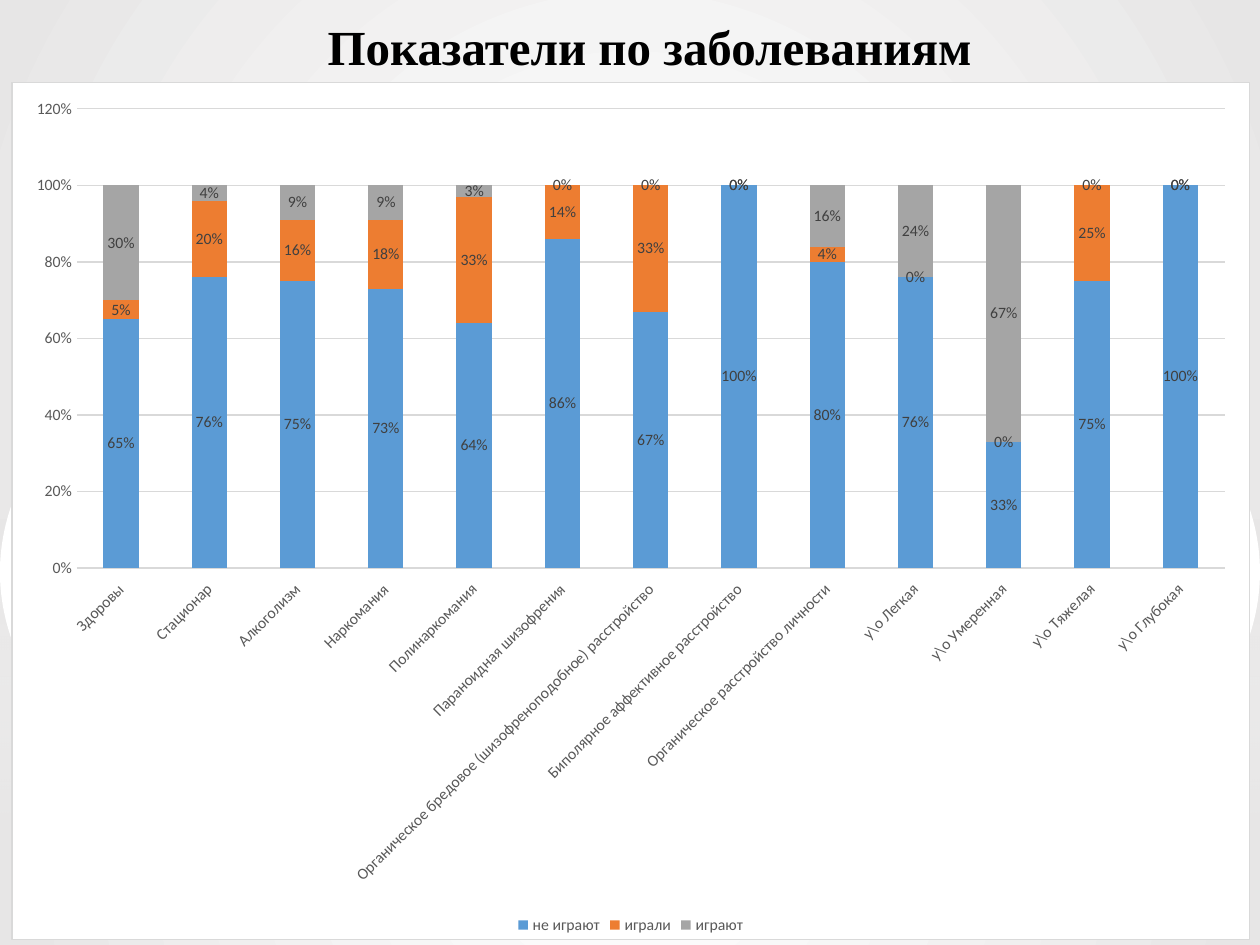
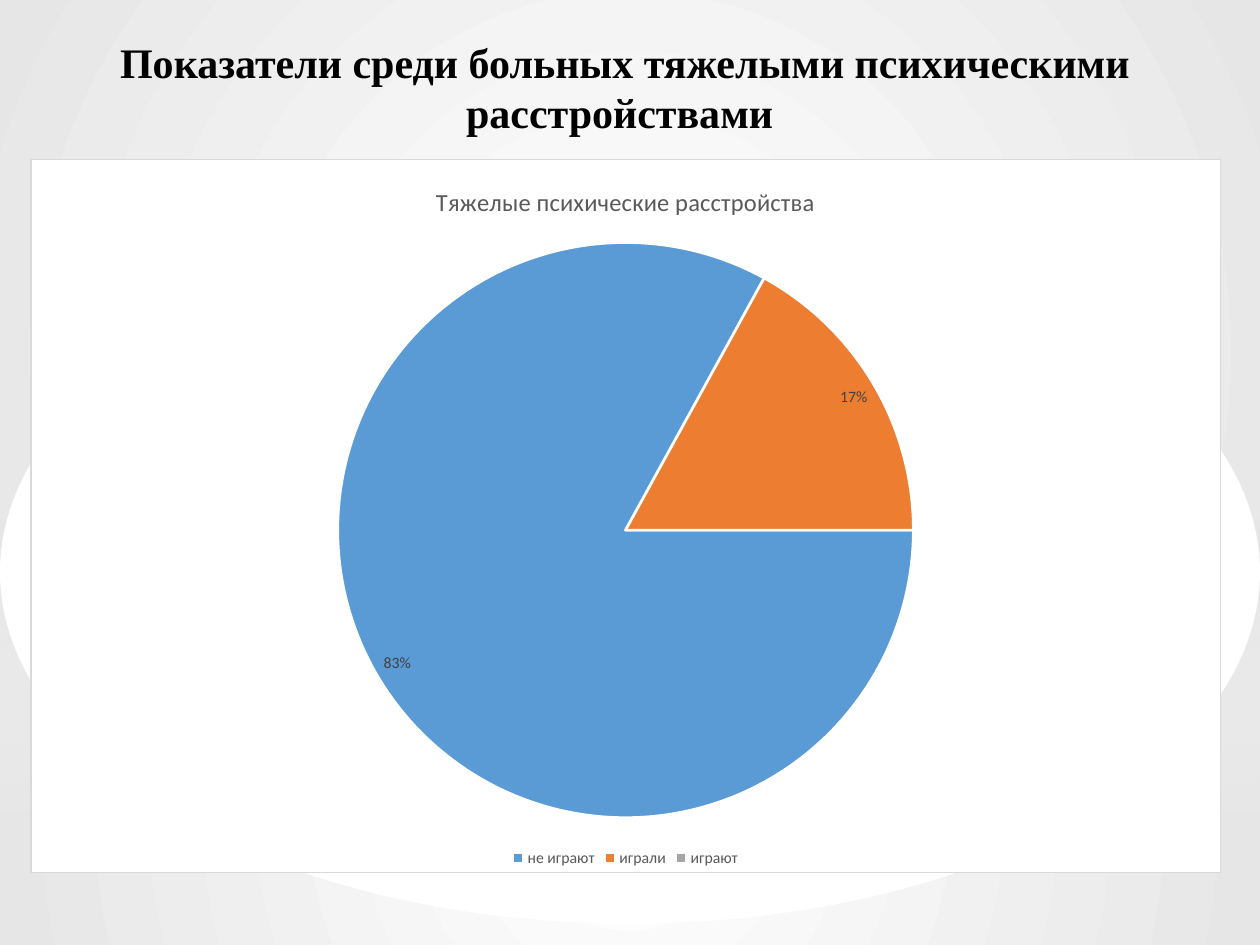
from dataclasses import dataclass
from typing import Optional

from lxml.etree import SubElement
from pptx import Presentation
from pptx.chart.chart import Chart
from pptx.chart.data import CategoryChartData
from pptx.dml.color import RGBColor
from pptx.dml.line import LineFormat
from pptx.enum.chart import (XL_CHART_TYPE, XL_LABEL_POSITION, XL_LEGEND_POSITION,
                             XL_TICK_LABEL_POSITION, XL_TICK_MARK)
from pptx.enum.shapes import MSO_SHAPE
from pptx.enum.text import MSO_ANCHOR, MSO_AUTO_SIZE, PP_ALIGN
from pptx.oxml import parse_xml
from pptx.oxml.ns import nsdecls, qn
from pptx.slide import Slide, SlideLayout
from pptx.text.text import Font, TextFrame
from pptx.util import Inches, Pt

COLORS = {
    "title": "000000",
    "white": "FFFFFF",
    "mist": "E7E6E6",
    "back_light": "DDDCDC",
    "back_dark": "BAB6B6",
    "rule": "D9D9D9",
    "axis_text": "595959",
    "label_text": "404040",
    "never": "5B9BD5",
    "formerly": "ED7D31",
    "currently": "A5A5A5",
}
TITLE_FONT = "Times New Roman"
CHART_FONT = "Calibri"
ANSWERS = ["не играют", "играли", "играют"]
ANSWER_COLORS = ["never", "formerly", "currently"]

SHARES_BY_ILLNESS = {
    "Здоровы": (0.65, 0.05, 0.3),
    "Стационар": (0.76, 0.2, 0.04),
    "Алкоголизм": (0.75, 0.16, 0.09),
    "Наркомания": (0.73, 0.18, 0.09),
    "Полинаркомания": (0.64, 0.33, 0.03),
    "Параноидная шизофрения": (0.86, 0.14, 0),
    "Органическое бредовое (шизофреноподобное) расстройство": (0.67, 0.33, 0),
    "Биполярное аффективное расстройство": (1, 0, 0),
    "Органическое расстройство личности": (0.8, 0.04, 0.16),
    "у\\о Легкая": (0.76, 0, 0.24),
    "у\\о Умеренная": (0.33, 0, 0.67),
    "у\\о Тяжелая": (0.75, 0.25, 0),
    "у\\о Глубокая": (1, 0, 0),
}
SEVERE_TITLE = "Тяжелые психические расстройства"
SEVERE_PERCENTAGES = (83, 17, 0)


@dataclass(frozen=True)
class Box:
    left: float
    top: float
    width: float
    height: float

    def emu(self) -> tuple:
        return tuple(Inches(n) for n in (self.left, self.top, self.width, self.height))


@dataclass(frozen=True)
class Gradient:
    """Two stops; radial towards focus (left, top, right, bottom), else downwards."""
    start: str
    end: str
    focus: Optional[tuple] = None
    alphas: tuple = (100, 100)


@dataclass(frozen=True)
class Backdrop:
    box: Box
    outline: MSO_SHAPE
    gradient: Optional[Gradient] = None


GLOW = Gradient("white", "mist", focus=(50, 50, 50, 50))
PAGE_GRADIENT = Gradient("back_light", "back_dark", focus=(50, 10, 50, 90))
BACKDROPS = [
    Backdrop(Box(0, 5.58, 10, 1.92), MSO_SHAPE.RECTANGLE, GLOW),
    Backdrop(Box(0, 0, 10, 5.58), MSO_SHAPE.RECTANGLE, GLOW),
    Backdrop(Box(0, 4.12, 10, 2.5), MSO_SHAPE.RECTANGLE,
             Gradient("mist", "white", alphas=(60, 0))),
    Backdrop(Box(0, 1.75, 10, 5.58), MSO_SHAPE.OVAL),
]


def rgb(name: str) -> RGBColor:
    return RGBColor.from_string(COLORS[name])


def style_font(font: Font, size: float, color: str, name: str = CHART_FONT,
               bold: bool = False) -> None:
    font.size, font.name, font.bold = Pt(size), name, bold
    font.color.rgb = rgb(color)


def write_text(frame: TextFrame, text: str, *, size: float, color: str,
               font: str = CHART_FONT, bold: bool = False) -> None:
    frame.text = text
    paragraph = frame.paragraphs[0]
    paragraph.alignment = PP_ALIGN.CENTER
    style_font(paragraph.runs[0].font, size, color, font, bold)


def style_line(line: LineFormat, color: str, width: float) -> None:
    line.color.rgb = rgb(color)
    line.width = Pt(width)


def put_gradient(properties, gradient: Gradient) -> None:
    """Swap the solid fill among these properties for the gradient."""
    stops = "".join(
        f'<a:gs pos="{position}"><a:srgbClr val="{COLORS[color]}">'
        f'<a:alpha val="{alpha * 1000}"/></a:srgbClr></a:gs>'
        for position, color, alpha in zip((0, 100000), (gradient.start, gradient.end),
                                          gradient.alphas))
    if gradient.focus:
        sides = " ".join(f'{side}="{share * 1000}"'
                         for side, share in zip("ltrb", gradient.focus))
        direction = f'<a:path path="circle"><a:fillToRect {sides}/></a:path>'
    else:
        direction = '<a:lin ang="5400000" scaled="0"/>'
    fill = parse_xml(f'<a:gradFill {nsdecls("a")} rotWithShape="1">'
                     f'<a:gsLst>{stops}</a:gsLst>{direction}</a:gradFill>')
    properties.replace(properties.find(qn("a:solidFill")), fill)


def decorate_layout(layout: SlideLayout, slide: Slide) -> None:
    """Draw the backdrops on the slide and move them behind the layout's content."""
    layout.background.fill.solid()
    put_gradient(layout._element.xpath("p:cSld/p:bg/p:bgPr")[0], PAGE_GRADIENT)
    for depth, backdrop in enumerate(BACKDROPS, start=2):
        shape = slide.shapes.add_shape(backdrop.outline, *backdrop.box.emu())
        shape.shadow.inherit = False
        shape.line.fill.background()
        shape.fill.solid()
        shape.fill.fore_color.rgb = rgb("white")
        if backdrop.gradient:
            put_gradient(shape._element.spPr, backdrop.gradient)
        layout.shapes._spTree.insert(depth, shape._element)


def set_title(slide: Slide, text: str, box: Box, size: float) -> None:
    title = slide.shapes.title
    title.left, title.top, title.width, title.height = box.emu()
    frame = title.text_frame
    frame.word_wrap = True
    frame.auto_size = MSO_AUTO_SIZE.SHAPE_TO_FIT_TEXT
    frame.vertical_anchor = MSO_ANCHOR.TOP
    write_text(frame, text, size=size, color="title", font=TITLE_FONT, bold=True)


def add_framed_chart(slide: Slide, kind: XL_CHART_TYPE, box: Box,
                     chart_data: CategoryChartData) -> Chart:
    """Add a chart on a white panel with a thin border and a legend below."""
    chart = slide.shapes.add_chart(kind, *box.emu(), chart_data).chart
    style_font(chart.font, 10, "title", "Arial")
    chart._chartSpace.find(qn("c:chart")).addnext(parse_xml(
        f'<c:spPr {nsdecls("c", "a")}>'
        f'<a:solidFill><a:srgbClr val="{COLORS["white"]}"/></a:solidFill>'
        f'<a:ln w="{Pt(0.75)}"><a:solidFill><a:srgbClr val="{COLORS["rule"]}"/>'
        '</a:solidFill></a:ln></c:spPr>'))
    chart.has_legend = True
    chart.legend.position = XL_LEGEND_POSITION.BOTTOM
    chart.legend.include_in_layout = False
    style_font(chart.legend.font, 9, "axis_text")
    return chart


def show_labels(series, position: XL_LABEL_POSITION, percent: bool = False) -> None:
    labels = series.data_labels
    labels.show_value, labels.show_percentage = not percent, percent
    labels.number_format, labels.number_format_is_linked = "0%", False
    labels.position = position
    style_font(labels.font, 9, "label_text")


def add_illness_columns(slide: Slide) -> None:
    chart_data = CategoryChartData(number_format="0%")
    chart_data.categories = list(SHARES_BY_ILLNESS)
    for answer, shares in zip(ANSWERS, zip(*SHARES_BY_ILLNESS.values())):
        chart_data.add_series(answer, shares)
    chart = add_framed_chart(slide, XL_CHART_TYPE.COLUMN_STACKED,
                             Box(0.09, 0.65, 9.83, 6.81), chart_data)
    chart.has_title = False
    plot = chart.plots[0]
    plot.gap_width, plot.overlap, plot.vary_by_categories = 150, 100, False
    for series, color in zip(plot.series, ANSWER_COLORS):
        series.format.fill.solid()
        series.format.fill.fore_color.rgb = rgb(color)
        show_labels(series, XL_LABEL_POSITION.CENTER)

    illnesses, shares = chart.category_axis, chart.value_axis
    for axis in (illnesses, shares):
        axis.major_tick_mark = axis.minor_tick_mark = XL_TICK_MARK.NONE
        style_font(axis.tick_labels.font, 9, "axis_text")
    illnesses.tick_label_position = XL_TICK_LABEL_POSITION.LOW
    style_line(illnesses.format.line, "rule", 0.75)
    slant = illnesses._element.find(qn("c:txPr")).find(qn("a:bodyPr"))
    slant.set("rot", "-2700000")
    slant.set("vert", "horz")
    shares.minimum_scale, shares.maximum_scale, shares.major_unit = 0, 1.2, 0.2
    shares.tick_labels.number_format = "0%"
    shares.tick_labels.number_format_is_linked = False
    shares.format.line.fill.background()
    style_line(shares.major_gridlines.format.line, "rule", 0.75)


def add_severe_pie(slide: Slide) -> None:
    chart_data = CategoryChartData()
    chart_data.categories = ANSWERS
    chart_data.add_series(SEVERE_TITLE, SEVERE_PERCENTAGES)
    chart = add_framed_chart(slide, XL_CHART_TYPE.PIE,
                             Box(0.24, 1.26, 9.45, 5.67), chart_data)
    chart.has_title = True
    write_text(chart.chart_title.text_frame, SEVERE_TITLE, size=14, color="axis_text")
    chart.chart_title.include_in_layout = False
    plot = chart.plots[0]
    plot.vary_by_categories = True
    series = plot.series[0]
    for index, color in enumerate(ANSWER_COLORS):
        slice_format = series.points[index].format
        slice_format.fill.solid()
        slice_format.fill.fore_color.rgb = rgb(color)
        style_line(slice_format.line, "white", 1.5)
    show_labels(series, XL_LABEL_POSITION.BEST_FIT, percent=True)
    SubElement(plot._element, qn("c:firstSliceAng")).set("val", "90")


def main() -> None:
    deck = Presentation()
    deck.slide_width, deck.slide_height = Inches(10), Inches(7.5)
    title_only = deck.slide_layouts.get_by_name("Title Only")

    by_illness = deck.slides.add_slide(title_only)
    decorate_layout(title_only, by_illness)
    set_title(by_illness, "Показатели по заболеваниям", Box(1.26, 0.08, 7.79, 0.56), 28)
    add_illness_columns(by_illness)

    severe = deck.slides.add_slide(title_only)
    set_title(severe, "Показатели среди больных тяжелыми психическими расстройствами ",
              Box(0.08, 0.24, 9.76, 0.9), 24)
    add_severe_pie(severe)
    deck.save("out.pptx")


if __name__ == "__main__":
    main()
